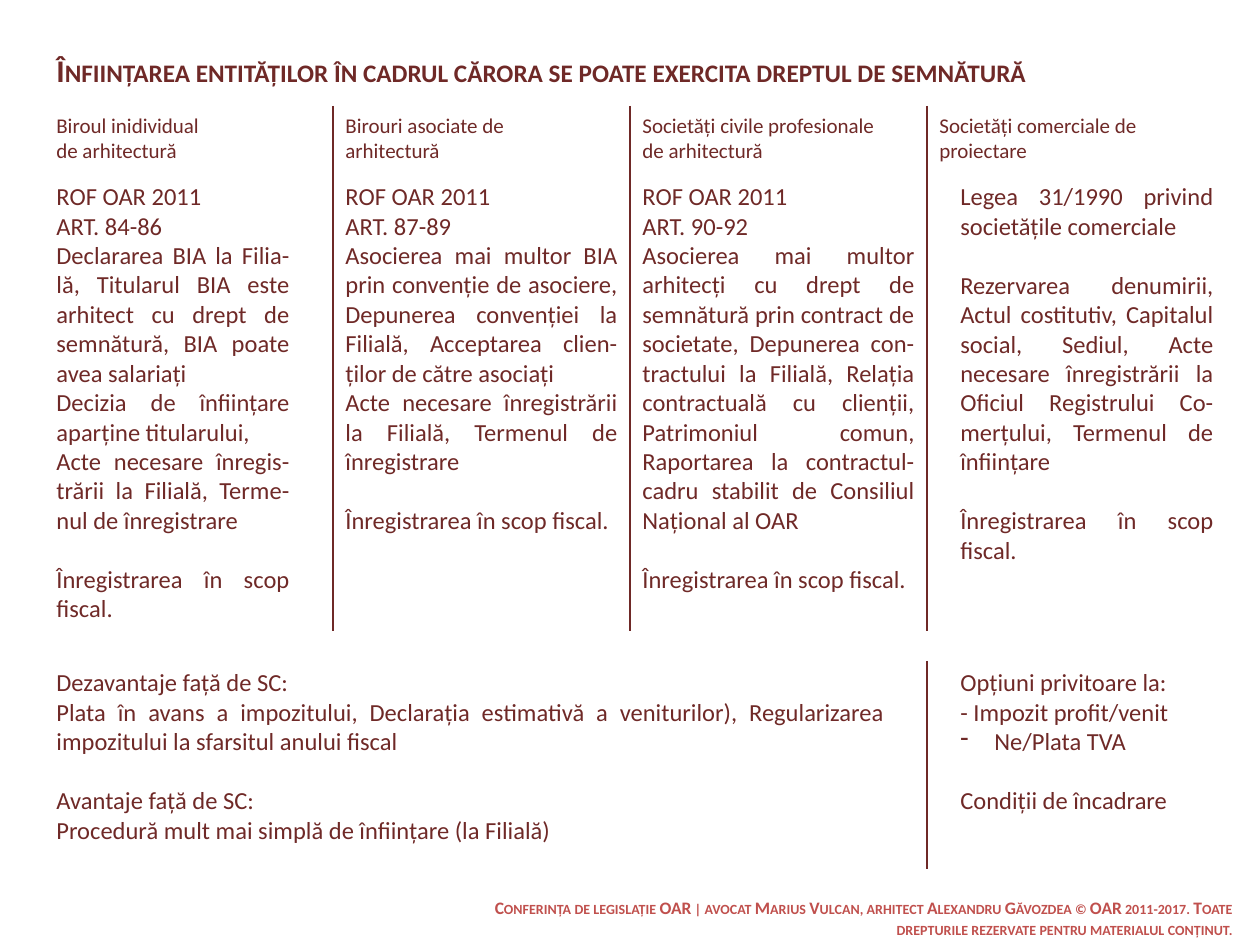
from lxml.etree import SubElement
from pptx import Presentation
from pptx.dml.color import RGBColor
from pptx.enum.shapes import MSO_CONNECTOR
from pptx.enum.text import MSO_ANCHOR, PP_ALIGN
from pptx.oxml.ns import qn
from pptx.util import Emu, Pt

BROWN = RGBColor(0x6F, 0x29, 0x27)
RED = RGBColor(0xC0, 0x50, 0x4D)
FONT = "Calibri"
PX_PER_INCH = 126
LEFT = 44
DIVIDERS = [333, 630, 927]
LAST_TEXT_LEFT = 948
HEADING_TOP = 106
BODY_TOP = 175
UPPER_BOTTOM = 631
LOWER_TOP = 661
LOWER_BOTTOM = 869
LOWER_HEIGHT = LOWER_BOTTOM - LOWER_TOP
FISCAL = ["Înregistrarea în scop fiscal."]

COLUMNS = [
    ("Biroul inidividual de arhitectură", LEFT, 189, LEFT, 258, 456, [
        ["ROF OAR 2011", "ART. 84-86",
         "Declararea BIA la Filia-lă, Titularul BIA este arhitect cu drept de "
         "semnătură, BIA poate avea salariați",
         "Decizia de înființare aparține titularului,",
         "Acte necesare înregis-trării la Filială, Terme-nul de înregistrare"],
        FISCAL]),
    ("Birouri asociate de arhitectură", DIVIDERS[0], 189, DIVIDERS[0], 297, 367, [
        ["ROF OAR 2011", "ART. 87-89",
         "Asocierea mai multor BIA prin convenție de asociere, Depunerea "
         "convenției la Filială, Acceptarea clien-ților de către asociați",
         "Acte necesare înregistrării la Filială, Termenul de înregistrare"],
        FISCAL]),
    ("Societăți civile profesionale de arhitectură", DIVIDERS[1], 268, DIVIDERS[1], 297, 427, [
        ["ROF OAR 2011", "ART. 90-92",
         "Asocierea mai multor arhitecți cu drept de semnătură prin contract de "
         "societate, Depunerea con-tractului la Filială, Relația contractuală cu "
         "clienții, Patrimoniul comun, Raportarea la contractul-cadru stabilit de "
         "Consiliul Național al OAR"],
        FISCAL]),
    ("Societăți comerciale de proiectare", DIVIDERS[2], 268, LAST_TEXT_LEFT, 278, 387, [
        ["Legea 31/1990 privind societățile comerciale"],
        ["Rezervarea denumirii, Actul costitutiv, Capitalul social, Sediul, Acte "
         "necesare înregistrării la Oficiul Registrului Co-merțului, Termenul de "
         "înființare"],
        FISCAL]),
]

COMPARISON = [
    ["Dezavantaje față de SC:",
     "Plata în avans a impozitului, Declarația estimativă a veniturilor), "
     "Regularizarea impozitului la sfarsitul anului fiscal"],
    ["Avantaje față de SC:",
     "Procedură mult mai simplă de înființare (la Filială)"],
]

OPTIONS = [
    ["Opțiuni privitoare la:", "- Impozit profit/venit", "Ne/Plata TVA"],
    ["Condiții de încadrare"],
]


def px(length):
    """Turn pixels into EMU."""
    return Emu(round(length * 914400 / PX_PER_INCH))


def add_text(slide, box, blocks, size, align=PP_ALIGN.LEFT, color=BROWN, heading=False):
    """Add a text box whose blocks of paragraphs are one line apart."""
    shape = slide.shapes.add_textbox(*map(px, box))
    frame = shape.text_frame
    frame.word_wrap = True
    paragraph = None
    for block in blocks:
        for position, text in enumerate(block):
            is_first = paragraph is None
            paragraph = frame.paragraphs[0] if is_first else frame.add_paragraph()
            paragraph.alignment = align
            if position == 0 and not is_first:
                paragraph.space_before = Pt(17)
            run = paragraph.add_run()
            run.text = text
            run.font.name = FONT
            run.font.size = Pt(size)
            run.font.color.rgb = color
            if heading:
                run.font.bold = True
                run.font._element.set("cap", "small")
    return frame


def add_body(slide, box, blocks):
    """Add justified body text."""
    return add_text(slide, box, blocks, 14, PP_ALIGN.JUSTIFY)


def add_dash_bullet(paragraph, indent):
    """Give a paragraph a dash bullet with a hanging indent."""
    properties = paragraph._p.get_or_add_pPr()
    properties.set("marL", str(px(indent)))
    properties.set("indent", str(-px(indent)))
    SubElement(properties, qn("a:buChar")).set("char", "-")


def add_divider(slide, left, top, bottom):
    """Add a vertical dividing line without a shadow."""
    line = slide.shapes.add_connector(
        MSO_CONNECTOR.STRAIGHT, px(left), px(top), px(left), px(bottom))
    line.line.color.rgb = BROWN
    line.line.width = Pt(1.25)
    SubElement(line._element.spPr, qn("a:effectLst"))


def main():
    """Build and save the slide."""
    presentation = Presentation()
    presentation.slide_width = px(1260)
    presentation.slide_height = px(945)
    slide = presentation.slides.add_slide(presentation.slide_layouts[6])

    add_text(slide, (LEFT, 45, 1153, 49), [[
        "Înființarea entităților în cadrul cărora se poate exercita dreptul de semnătură"]],
        18, heading=True)
    for heading, heading_left, heading_width, left, width, height, blocks in COLUMNS:
        add_text(slide, (heading_left, HEADING_TOP, heading_width, 49), [[heading]], 12)
        add_body(slide, (left, BODY_TOP, width, height), blocks)
    for left in DIVIDERS:
        add_divider(slide, left, HEADING_TOP, UPPER_BOTTOM)

    add_body(slide, (LEFT, LOWER_TOP, 853, LOWER_HEIGHT), COMPARISON)
    options = add_body(slide, (LAST_TEXT_LEFT, LOWER_TOP, 297, LOWER_HEIGHT), OPTIONS)
    add_dash_bullet(options.paragraphs[2], 34)
    add_divider(slide, DIVIDERS[-1], LOWER_TOP, LOWER_BOTTOM)

    footer = add_text(slide, (481, 906, 764, 24), [[
        "Conferința de legislație OAR | avocat Marius Vulcan, arhitect Alexandru Găvozdea "
        "© OAR 2011-2017. Toate drepturile rezervate pentru materialul conținut."]],
        10, PP_ALIGN.RIGHT, RED, heading=True)
    footer.vertical_anchor = MSO_ANCHOR.MIDDLE
    presentation.save("out.pptx")


if __name__ == "__main__":
    main()
